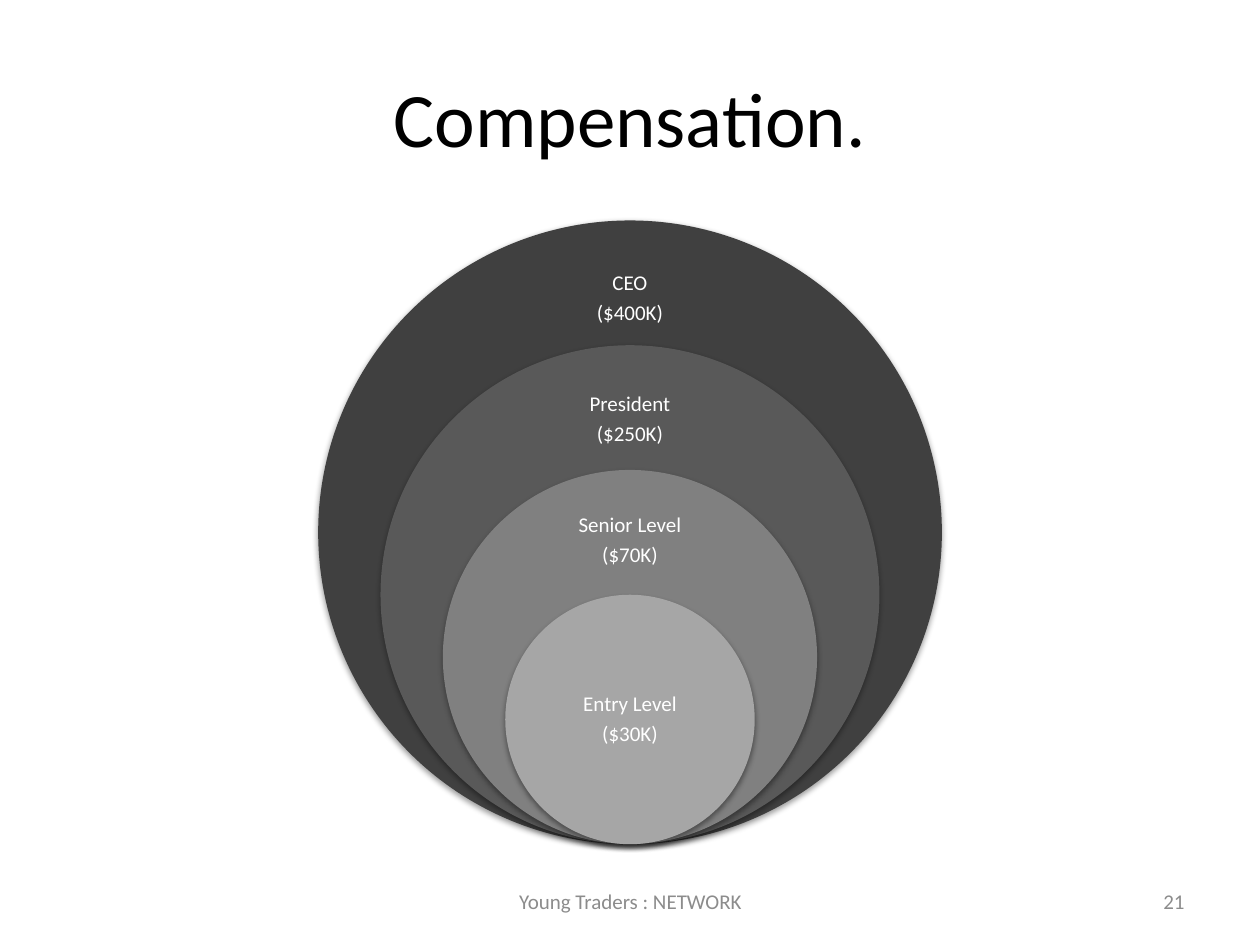
from lxml import etree
from pptx import Presentation
from pptx import util as u
from pptx.dml.color import RGBColor
from pptx.enum import shapes, text
from pptx.oxml.ns import qn

WIDE, HIGH = 10, 7.5
STEP = 0.99
BASE = 6.7
MID = WIDE / 2
RINGS = [
    ("CEO", "($400K)", "404040", 5, 2.37),
    ("President", "($250K)", "595959", 4, 3.33),
    ("Senior Level", "($70K)", "808080", 3, 4.29),
    ("Entry Level", "($30K)", "A6A6A6", 2, 5.71),
]


def tint(color, code):
    """Set a colour from a hex string."""
    color.rgb = RGBColor.from_string(code)


def place(left, top, width, height):
    """Turn inches into a position and size."""
    return [u.Inches(n) for n in (left, top, width, height)]


def label(host, area, words, size, code, align=text.PP_ALIGN.CENTER):
    """Add a text box centred vertically on its area."""
    box = host.add_textbox(*place(*area))
    frame = box.text_frame
    frame.text = words
    frame.word_wrap = True
    frame.vertical_anchor = text.MSO_ANCHOR.MIDDLE
    for para in frame.paragraphs:
        para.alignment = align
        for run in para.runs:
            run.font.name = "Calibri"
            run.font.size = u.Pt(size)
            tint(run.font.color, code)
    return frame


def shade(shape):
    """Give a shape a soft black shadow straight below it."""
    shape.shadow.inherit = False
    effects = shape.element.spPr.find(qn("a:effectLst"))
    outer = etree.SubElement(effects, qn("a:outerShdw"), blurRad=str(u.Pt(3.1)),
                             dist=str(u.Pt(1.6)), dir="5400000", rotWithShape="0")
    black = etree.SubElement(outer, qn("a:srgbClr"), val="000000")
    etree.SubElement(black, qn("a:alpha"), val="38000")


def ring(group, role, pay, code, rank, centre):
    """Add one circle resting on the base line, with its label."""
    side = rank * STEP
    disc = group.add_shape(shapes.MSO_SHAPE.OVAL,
                           *place(MID - side / 2, BASE - side, side, side))
    disc.fill.solid()
    tint(disc.fill.fore_color, code)
    disc.line.fill.background()
    shade(disc)
    frame = label(group, (MID - 0.6, centre - 0.3, 1.2, 0.6),
                  f"{role}\n{pay}", 12, "FFFFFF")
    for para in frame.paragraphs:
        para.line_spacing = 0.9
    frame.paragraphs[0].space_after = u.Pt(4.2)


def main():
    """Build the slide and save it."""
    deck = Presentation()
    deck.slide_width, deck.slide_height = u.Inches(WIDE), u.Inches(HIGH)
    slide = deck.slides.add_slide(deck.slide_layouts[6])
    label(slide.shapes, (0.5, 0.3, 9, 1.25), "Compensation.", 44, "000000")
    label(slide.shapes, (3.42, 6.95, 3.17, 0.4),
          "Young Traders : NETWORK", 12, "8C8C8C")
    label(slide.shapes, (7.17, 6.95, 2.33, 0.4), "21", 12, "8C8C8C",
          text.PP_ALIGN.RIGHT)
    group = slide.shapes.add_group_shape().shapes
    for item in RINGS:
        ring(group, *item)
    deck.save("out.pptx")


if __name__ == "__main__":
    main()
